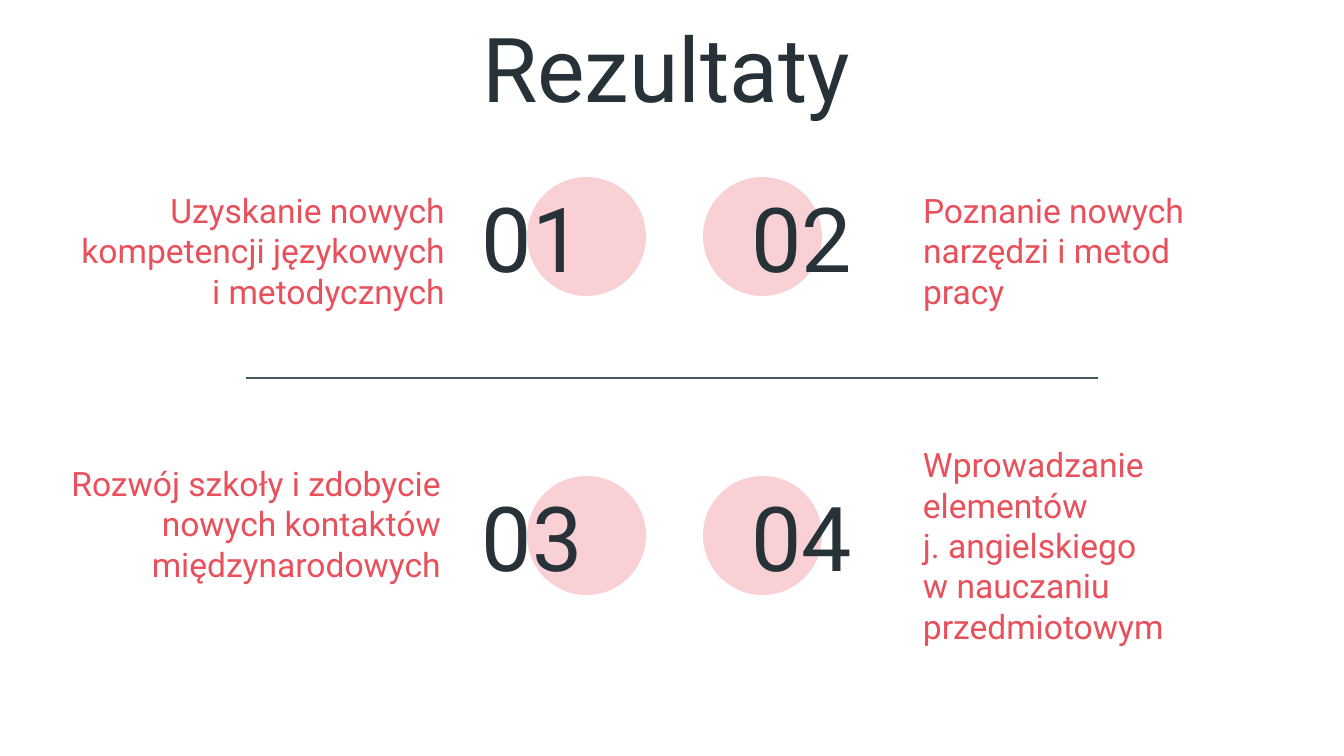
"""Build the results slide: four numbered outcomes around a dividing line."""
from lxml.etree import SubElement
from pptx import Presentation
from pptx.dml.color import RGBColor
from pptx.enum.shapes import MSO_CONNECTOR, MSO_SHAPE
from pptx.enum.text import MSO_ANCHOR, MSO_AUTO_SIZE, PP_ALIGN
from pptx.oxml.ns import qn
from pptx.util import Pt

PX = 914400 / 134.4
COLORS = {"dark": "263238", "red": "E8505B", "rule": "455A64", "back": "FFFFFF"}
LEFT, RIGHT = PP_ALIGN.LEFT, PP_ALIGN.RIGHT


def px(*sizes):
    return [round(size * PX) for size in sizes]


def write(shape, lines, size, color, align, anchor):
    frame = shape.text_frame
    frame.word_wrap = True
    frame.auto_size = MSO_AUTO_SIZE.NONE
    frame.vertical_anchor = anchor
    inset = px(13)[0]
    frame.margin_left = frame.margin_right = inset
    frame.margin_top = frame.margin_bottom = inset
    para = frame.paragraphs[0]
    para.alignment = align
    para.line_spacing = 1.0
    para.space_before = Pt(0)
    for i, line in enumerate(lines):
        if i:
            para.add_line_break()
        run = para.add_run()
        run.text = line
        run.font.name = "Roboto"
        run.font.size = Pt(size)
        run.font.color.rgb = RGBColor.from_string(COLORS[color])


prs = Presentation()
prs.slide_width, prs.slide_height = px(1344, 756)
slide = prs.slides.add_slide(prs.slide_layouts[5])
slide.background.fill.solid()
slide.background.fill.fore_color.rgb = RGBColor.from_string(COLORS["back"])
shapes = slide.shapes

title = shapes.title
title.left, title.top, title.width, title.height = px(469, 21, 691, 112)
write(title, ["Rezultaty"], 48, "dark", LEFT, MSO_ANCHOR.BOTTOM)

columns = [(527, 469, LEFT, RIGHT), (703, 689, RIGHT, LEFT)]
rows = [177, 476]
items = [
    ((26, 177, 432, 147), ["Uzyskanie nowych kompetencji językowych", "i metodycznych"]),
    ((910, 184, 308, 140), ["Poznanie nowych narzędzi i metod pracy"]),
    ((0, 446, 454, 151), ["Rozwój szkoły i zdobycie nowych kontaktów międzynarodowych"]),
    ((910, 432, 412, 227),
     ["Wprowadzanie elementów", "j. angielskiego", "w nauczaniu przedmiotowym"]),
]

for i, (box, lines) in enumerate(items):
    top = rows[i // 2]
    disc_x, num_x, num_al, text_al = columns[i % 2]
    disc = shapes.add_shape(MSO_SHAPE.OVAL, *px(disc_x, top, 119, 119))
    disc.shadow.inherit = False
    disc.line.fill.background()
    disc.fill.solid()
    disc.fill.fore_color.rgb = RGBColor.from_string(COLORS["red"])
    tint = disc.fill._xPr.find(qn("a:solidFill"))[0]
    SubElement(tint, qn("a:alpha"), val="26000")

    number = shapes.add_textbox(*px(num_x, top + 5, 176, 110))
    write(number, [f"{i + 1:02}"], 48, "dark", num_al, MSO_ANCHOR.MIDDLE)
    label = shapes.add_textbox(*px(*box))
    write(label, lines, 18, "red", text_al, MSO_ANCHOR.BOTTOM)

rule = shapes.add_connector(MSO_CONNECTOR.STRAIGHT, *px(246, 378, 1098, 378))
rule.line.color.rgb = RGBColor.from_string(COLORS["rule"])
rule.line.width = Pt(0.75)
SubElement(rule._element.spPr, qn("a:effectLst"))

prs.save("out.pptx")
